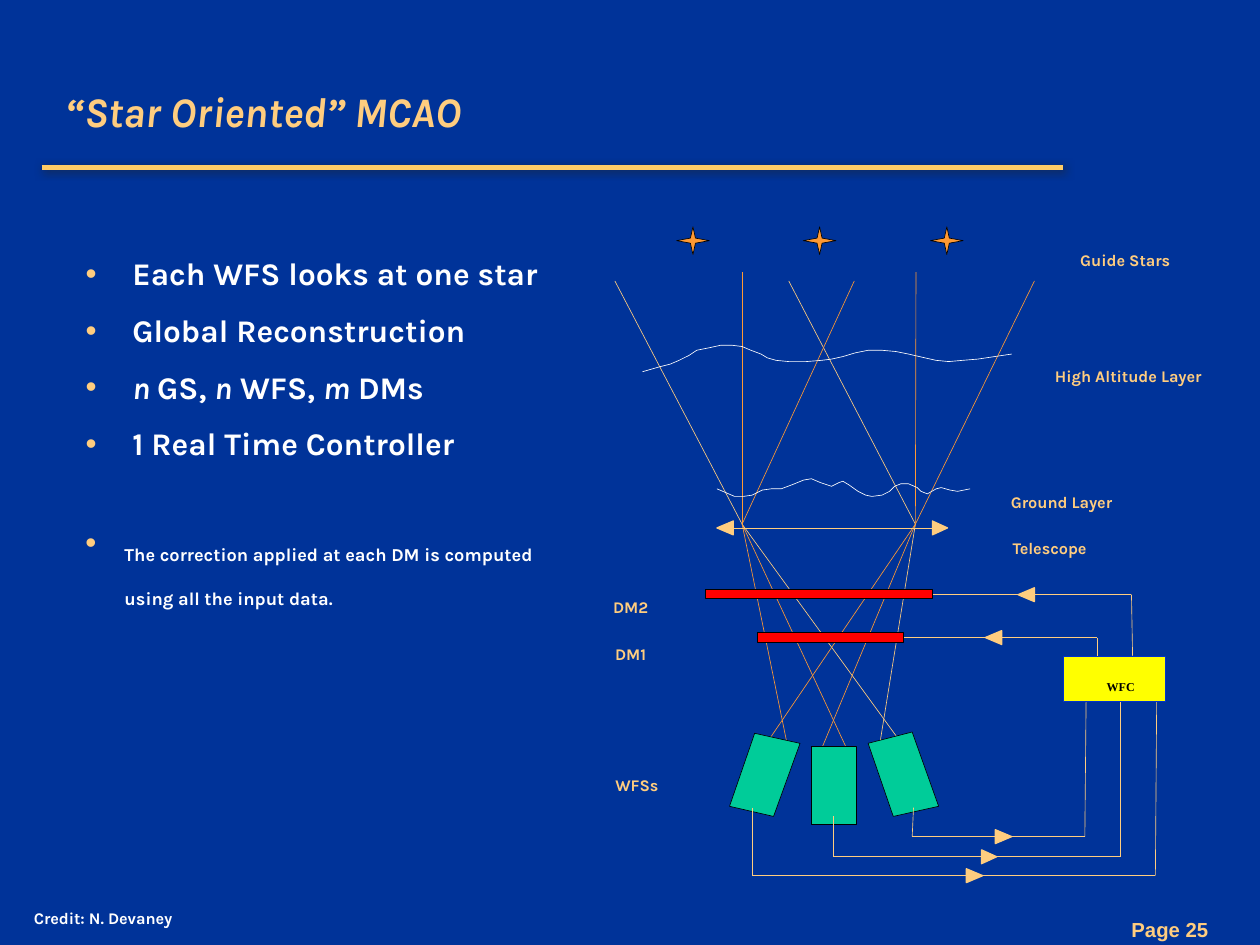
from pptx import Presentation
from pptx.util import Cm, Pt
from pptx.dml.color import RGBColor as Rgb
from pptx.enum.shapes import MSO_SHAPE as Kind, MSO_CONNECTOR as Link
from pptx.enum.text import PP_ALIGN as Align, MSO_ANCHOR as Anchor, MSO_AUTO_SIZE as Auto
from pptx.oxml.ns import qn
from lxml.etree import SubElement as Sub


class Theme:
    back, gold, rule, star = "003399", "FFCD7F", "FFCC66", "FF9933"
    white, black, red, green = "FFFFFF", "000000", "FF0000", "00CC99"
    box, edge = "FFFF00", "0033CC"
    font, sans, serif = "Karla", "Arial", "Times New Roman"
    title, body, label, page, tiny = 24, 18, 16, 20, 12
    thin, mid, thick = 0.38, 0.75, 3


T = Theme

# Content; places are in inches
TITLE = "“Star Oriented” MCAO"
BULLETS = [
    [("Each WFS looks at one star", False)],
    [("Global Reconstruction", False)],
    [("n ", True), ("GS, ", False), ("n", True), (" WFS, ", False),
     ("m", True), (" DMs", False)],
    [("1 Real Time Controller", False)],
]
NOTE = "The correction applied at each DM is computed using all the input data."
LABELS = [  # text, left, top, width
    ("Guide Stars", 8.32, 1.83, 1.22), ("High Altitude Layer", 7.92, 2.75, 2.07),
    ("Ground Layer", 7.63, 3.75, 1.59), ("Telescope", 7.8, 4.11, 1.06),
    ("DM2", 4.78, 4.58, 0.45), ("DM1", 4.78, 4.95, 0.45), ("WFSs", 4.78, 5.99, 0.55),
]
STARS = [5.5, 6.505, 7.515]
PUPIL = (5.89, 7.265, 4.16)  # left edge, right edge, height
BEAMS = [  # colour, left top, right top, sky height, left end, right end
    (T.star, 5.89, 7.27, 2.16, 6.71, 6.53),
    (T.gold, 4.88, 6.26, 2.23, 7.17, 6.98),
    (T.star, 6.78, 8.21, 2.23, 6.25, 6.07),
]
SENSORS = [
    [(6.44, 5.92), (6.8, 5.92), (6.8, 6.54), (6.44, 6.54)],
    [(6.89, 5.9), (7.09, 6.48), (7.45, 6.4), (7.24, 5.81)],
    [(6.35, 5.9), (6.14, 6.48), (5.79, 6.4), (5.99, 5.82)],
]
WIRES = [  # points up to the arrowhead, points after it
    ([(6.61, 6.48), (6.61, 6.8), (7.79, 6.8)], [(7.91, 6.8), (8.89, 6.8), (8.89, 5.57)]),
    ([(7.25, 6.41), (7.24, 6.64), (7.9, 6.64)], [(8.03, 6.64), (8.61, 6.64), (8.62, 5.57)]),
    ([(5.97, 6.41), (5.97, 6.95), (7.67, 6.95)], [(7.8, 6.95), (9.17, 6.95), (9.18, 5.57)]),
    ([(8.99, 5.26), (8.98, 4.72), (8.21, 4.72)], [(8.08, 4.72), (7.4, 4.72)]),
    ([(8.71, 5.22), (8.71, 5.06), (7.95, 5.06)], [(7.82, 5.06), (7.15, 5.06)]),
    ([(5.82, 4.19), (7.4, 4.19)], [(7.52, 4.19)]),
    ([(5.82, 4.19)], [(5.69, 4.19)]),
]
MIRRORS = [(5.6, 4.68, 1.8, 0.07), (6.01, 5.02, 1.16, 0.08)]
HIGH = [
    (8.03, 2.81), (7.76, 2.85), (7.64, 2.86), (7.53, 2.87), (7.43, 2.86), (7.34, 2.84),
    (7.21, 2.81), (7.11, 2.79), (7, 2.78), (6.89, 2.78), (6.79, 2.8), (6.69, 2.83),
    (6.6, 2.85), (6.52, 2.86), (6.4, 2.87), (6.26, 2.87), (6.16, 2.86), (6.09, 2.84),
    (6.04, 2.81), (5.96, 2.78), (5.89, 2.75), (5.81, 2.74), (5.72, 2.74), (5.63, 2.76),
    (5.53, 2.78), (5.47, 2.82), (5.39, 2.86), (5.32, 2.89), (5.24, 2.91), (5.1, 2.95),
]
GROUND = [
    (7.7, 3.88), (7.65, 3.89), (7.6, 3.9), (7.54, 3.89), (7.47, 3.87), (7.43, 3.88),
    (7.36, 3.92), (7.31, 3.9), (7.28, 3.87), (7.21, 3.84), (7.15, 3.84), (7.1, 3.86),
    (7.06, 3.9), (7, 3.93), (6.92, 3.94), (6.87, 3.93), (6.81, 3.9), (6.74, 3.85),
    (6.69, 3.82), (6.66, 3.83), (6.6, 3.86), (6.57, 3.85), (6.51, 3.83), (6.44, 3.8),
    (6.38, 3.81), (6.33, 3.83), (6.28, 3.85), (6.2, 3.88), (6.12, 3.88), (6.05, 3.89),
    (5.97, 3.93), (5.9, 3.94), (5.83, 3.94), (5.76, 3.91), (5.69, 3.88),
]

deck = Presentation()
deck.slide_width, deck.slide_height = Cm(25.4), Cm(19.05)
slide = deck.slides.add_slide(deck.slide_layouts[1])
slide.background.fill.solid()
slide.background.fill.fore_color.rgb = Rgb.from_string(T.back)
parts = slide.shapes


def inch(n):
    return Cm(n * 2.54)


def place(item, *box):
    item.left, item.top, item.width, item.height = map(inch, box)


def write(para, text, size=T.label, font=T.font, color=T.gold, bold=True,
          slant=False, low=False, align=Align.LEFT):
    para.alignment = align
    run = para.add_run()
    run.text = text
    face = run.font
    face.size, face.name, face.bold, face.italic = Pt(size), font, bold, slant
    face.color.rgb = Rgb.from_string(color)
    if low:  # subscript, drawn smaller
        face._element.set("baseline", "-30000")


def bullet(para, dent):
    props = para._p.get_or_add_pPr()
    props.set("marL", str(inch(dent)))
    props.set("indent", str(-inch(dent)))
    Sub(Sub(props, qn("a:buClr")), qn("a:srgbClr")).set("val", T.gold)
    Sub(props, qn("a:buFont")).set("typeface", T.sans)
    Sub(props, qn("a:buChar")).set("char", "•")


def text_box(*box, pad=True, wrap=False):
    item = parts.add_textbox(*map(inch, box))
    frame = item.text_frame
    frame.word_wrap = wrap
    if not pad:
        frame.margin_left = frame.margin_right = frame.margin_top = frame.margin_bottom = 0
    return frame


def line(a, b, color=T.gold, width=T.thin):
    item = parts.add_connector(Link.STRAIGHT, *map(inch, a + b))
    item.line.color.rgb = Rgb.from_string(color)
    item.line.width = Pt(width)
    return Sub(item._element.spPr, qn("a:effectLst"))


def paint(item, fill, edge, width=T.thin):
    item.shadow.inherit = False
    if fill:
        item.fill.solid()
        item.fill.fore_color.rgb = Rgb.from_string(fill)
    else:
        item.fill.background()
    item.line.color.rgb = Rgb.from_string(edge)
    item.line.width = Pt(width)


def outline(points, fill, edge, width=T.thin):
    dots = [(inch(x), inch(y)) for x, y in points]
    pen = parts.build_freeform(*dots[0])
    pen.add_line_segments(dots[1:], close=bool(fill))
    paint(pen.convert_to_shape(), fill, edge, width)


def block(box, fill, edge):
    paint(parts.add_shape(Kind.RECTANGLE, *map(inch, box)), fill, edge)


# Rule under the title, with its soft shadow
glow = Sub(line((0.33, 1.33), (8.44, 1.33), T.rule, T.thick), qn("a:outerShdw"),
           blurRad=str(Pt(5)), dist=str(Pt(1.4)), dir="2700000")
tone = Sub(glow, qn("a:srgbClr"), val="232323")
Sub(tone, qn("a:alpha"), val="75000")

# Title and bullet list
title, body = parts.title, slide.placeholders[1]
place(title, 0.42, 0.5, 8.67, 0.75)
title.text_frame.vertical_anchor = Anchor.MIDDLE
write(title.text_frame.paragraphs[0], TITLE, size=T.title, slant=True)
place(body, 0.58, 1.5, 4, 2.33)
frame = body.text_frame
frame.auto_size = Auto.NONE
frame.margin_top = inch(0.55)
for i, runs in enumerate(BULLETS):
    para = frame.add_paragraph() if i else frame.paragraphs[0]
    para.line_spacing = 0.9
    para.space_before = Pt(13 if i else 0)
    bullet(para, 0.37)
    for text, slant in runs:
        write(para, text, size=T.body, color=T.white, slant=slant)

# Beams with their wavefront sensors
left, right, lens = PUPIL
for (color, a, b, sky, c, d), shape in zip(BEAMS, SENSORS):
    for top, edge, end in ((a, left, c), (b, right, d)):
        line((top, sky), (edge, lens), color)
        line((edge, lens), (end, 5.92), color)
    outline(shape, T.green, T.black)

# Guide stars
for x in STARS:
    y, far, tall, near = 1.91, 0.13, 0.11, 0.02
    outline([(x + far, y), (x + near, y - near), (x, y - tall), (x - near, y - near),
             (x - far, y), (x - near, y + near), (x, y + tall), (x + near, y + near)],
            T.star, T.black)

# Wires with arrowheads
for head, tail in WIRES:
    for run in (head, tail):
        for a, b in zip(run, run[1:]):
            line(a, b)
    x, y = head[-1]
    outline([(x, y - 0.055), tail[0], (x, y + 0.055)], T.gold, T.gold, T.mid)

# Air layers, mirrors and controller
for wave in (HIGH, GROUND):
    outline(wave, None, T.white)
for box in MIRRORS:
    block(box, T.red, T.black)
block((8.44, 5.21, 0.81, 0.36), T.box, T.edge)

# Labels and small texts
for text, x, y, w in LABELS:
    write(text_box(x, y, w, 0.27, pad=False).paragraphs[0], text, low=True, align=Align.CENTER)
write(text_box(8.7, 5.27, 0.39, 0.2, pad=False).paragraphs[0], "WFC", size=T.tiny,
      font=T.serif, color=T.black, low=True, align=Align.CENTER)
para = text_box(0.58, 4.08, 4, 1.25, wrap=True).paragraphs[0]
bullet(para, 0.31)
write(para, NOTE, size=T.body, color=T.white, low=True)
write(text_box(0.17, 7, 2.24, 0.38).paragraphs[0], "Credit: N. Devaney",
      color=T.white, low=True)
frame = text_box(7.22, 7.03, 2.59, 0.43, wrap=True)
frame.margin_right = inch(0.22)
write(frame.paragraphs[0], "Page 25", size=T.page, font=T.sans, low=True, align=Align.RIGHT)

deck.save("out.pptx")
